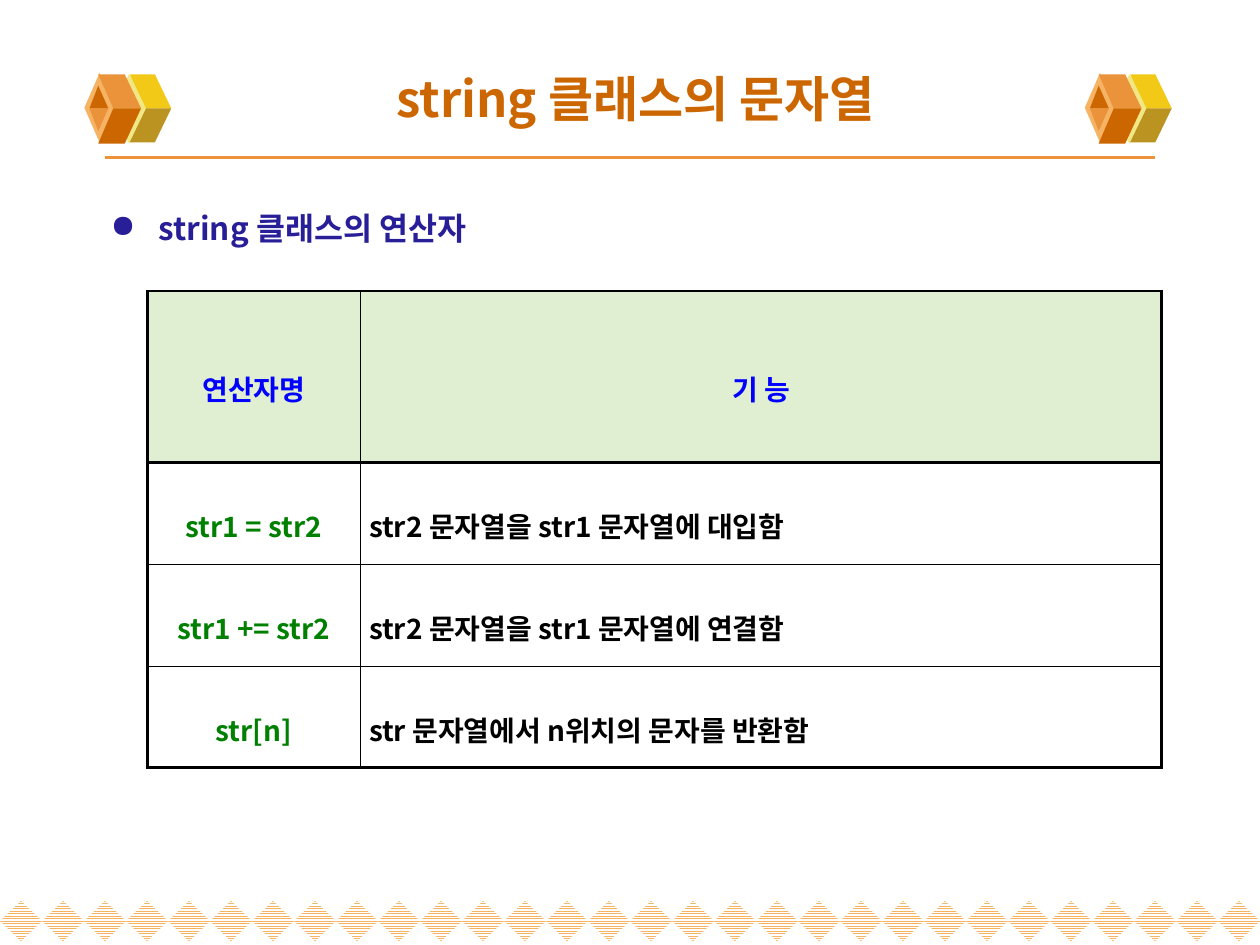
from dataclasses import dataclass

from lxml.etree import SubElement
from pptx import Presentation
from pptx.dml.color import RGBColor
from pptx.enum.dml import MSO_PATTERN
from pptx.enum.shapes import MSO_CONNECTOR, MSO_SHAPE
from pptx.enum.text import MSO_ANCHOR, PP_ALIGN
from pptx.oxml.ns import qn
from pptx.util import Inches, Pt


@dataclass(frozen=True)
class Theme:
    font: str = "Noto Sans CJK KR"
    title_size: int = 28
    bullet_size: int = 18
    cell_size: int = 16
    white: str = "FFFFFF"
    black: str = "000000"
    title: str = "CC6600"
    bullet: str = "271E98"
    header: str = "0000FF"
    header_fill: str = "E0EED1"
    operator: str = "008000"
    dark_orange: str = "CC6600"
    orange: str = "EB933B"
    light_orange: str = "F5B363"
    yellow: str = "F3C917"
    olive: str = "BB9321"
    cream: str = "F1E785"
    outer: float = 1.7
    divider: float = 1.98
    inner: float = 0.28


THEME = Theme()
CUBE_FACES = [
    (THEME.yellow, [(0.49, 0.28), (0.69, 0.28), (0.56, 0.01), (0.36, 0.01)]),
    (THEME.olive, [(0.49, 0.28), (0.69, 0.28), (0.56, 0.55), (0.36, 0.55)]),
    (THEME.orange, [(0.23, 0.28), (0.45, 0.28), (0.32, 0.01), (0.11, 0.01)]),
    (THEME.dark_orange, [(0.23, 0.28), (0.45, 0.28), (0.32, 0.56), (0.11, 0.56)]),
    (THEME.dark_orange, [(0.11, 0.1), (0.04, 0.28), (0.19, 0.28)]),
    (THEME.orange, [(0.11, 0.46), (0.04, 0.28), (0.19, 0.28)]),
]
ROWS = [
    ("연산자명", "기 능"),
    ("str1 = str2", "str2 문자열을 str1 문자열에 대입함"),
    ("str1 += str2", "str2 문자열을 str1 문자열에 연결함"),
    ("str[n]", "str 문자열에서 n위치의 문자를 반환함"),
]


def rgb(color):
    return RGBColor.from_string(color)


def paint(shape, color):
    shape.shadow.inherit = False
    shape.fill.solid()
    shape.fill.fore_color.rgb = rgb(color)
    shape.line.fill.background()


def add_diamond(page, left, top, width, height, color):
    diamond = page.shapes.add_shape(
        MSO_SHAPE.DIAMOND, Inches(left), Inches(top), Inches(width), Inches(height))
    paint(diamond, color)
    return diamond


def add_diamond_strip(page, count=30):
    step = 10 / count
    for index in range(count):
        fill = add_diamond(page, index * step, 7.15, step, 0.32, THEME.white).fill
        fill.patterned()
        fill.pattern = MSO_PATTERN.NARROW_HORIZONTAL
        fill.fore_color.rgb = rgb(THEME.light_orange)
        fill.back_color.rgb = rgb(THEME.white)


def add_face(page, points, color):
    corners = [(Inches(x), Inches(y)) for x, y in points]
    builder = page.shapes.build_freeform(*corners[0])
    builder.add_line_segments(corners[1:], close=True)
    paint(builder.convert_to_shape(), color)


def add_cube(page, left, top=0.58):
    add_diamond(page, left + 0.19, top + 0.01, 0.33, 0.55, THEME.cream)
    for index, (color, points) in enumerate(CUBE_FACES):
        if index == 2:
            add_diamond(page, left, top, 0.24, 0.55, THEME.light_orange)
        add_face(page, [(left + x, top + y) for x, y in points], color)


def add_rule(page):
    rule = page.shapes.add_connector(
        MSO_CONNECTOR.STRAIGHT, Inches(0.83), Inches(1.25), Inches(9.17), Inches(1.25))
    rule.line.color.rgb = rgb(THEME.orange)
    rule.line.width = Pt(2.25)
    SubElement(rule._element.spPr, qn("a:effectLst"))


def write(frame, text, size, color, align=PP_ALIGN.LEFT):
    para = frame.paragraphs[0]
    para.text = text
    para.alignment = align
    para.font.name = THEME.font
    para.font.size = Pt(size)
    para.font.bold = True
    para.font.color.rgb = rgb(color)
    defaults = para._p.pPr.find(qn("a:defRPr"))
    SubElement(defaults, qn("a:ea"), typeface=THEME.font)
    return para


def add_text_box(page, left, top, width, height, anchor):
    box = page.shapes.add_textbox(
        Inches(left), Inches(top), Inches(width), Inches(height))
    frame = box.text_frame
    frame.word_wrap = True
    frame.vertical_anchor = anchor
    return frame


def add_title(page, text):
    frame = add_text_box(page, 0.5, 0.3, 9, 0.95, MSO_ANCHOR.MIDDLE)
    write(frame, text, THEME.title_size, THEME.title, PP_ALIGN.CENTER)


def add_bullet(page, text):
    frame = add_text_box(page, 0.78, 1.61, 8.67, 0.71, MSO_ANCHOR.TOP)
    properties = frame.paragraphs[0]._p.get_or_add_pPr()
    properties.set("marL", str(Inches(0.38)))
    properties.set("indent", str(-Inches(0.38)))
    SubElement(properties, qn("a:buChar"), char="●")
    write(frame, text, THEME.bullet_size, THEME.bullet)


def set_borders(cell, **widths):
    properties = cell._tc.get_or_add_tcPr()
    for side, width in widths.items():
        border = SubElement(properties, qn(f"a:ln{side}"), w=str(Pt(width)))
        fill = SubElement(border, qn("a:solidFill"))
        SubElement(fill, qn("a:srgbClr"), val=THEME.black)


def style_cell(cell, text, row, column):
    header = row == 0
    cell.vertical_anchor = MSO_ANCHOR.MIDDLE
    cell.margin_left = cell.margin_right = Inches(0.07)
    cell.margin_top = cell.margin_bottom = Inches(0.02)
    color = THEME.header if header else (THEME.operator, THEME.black)[column]
    centered = header or column == 0
    align = PP_ALIGN.CENTER if centered else PP_ALIGN.JUSTIFY
    write(cell.text_frame, text, THEME.cell_size, color, align).line_spacing = 1.6
    row_lines = [THEME.outer, THEME.divider, THEME.inner, THEME.inner, THEME.outer]
    column_lines = [THEME.outer, THEME.inner, THEME.outer]
    set_borders(cell, L=column_lines[column], R=column_lines[column + 1],
                T=row_lines[row], B=row_lines[row + 1])
    if header:
        cell.fill.solid()
        cell.fill.fore_color.rgb = rgb(THEME.header_fill)
    else:
        cell.fill.background()


def add_operator_table(page):
    table = page.shapes.add_table(
        len(ROWS), 2, Inches(1.17), Inches(2.31), Inches(8.05), Inches(3.78)).table
    table.first_row = table.horz_banding = False
    for column, width in zip(table.columns, (1.69, 6.36)):
        column.width = Inches(width)
    for row, height in zip(table.rows, (1.36, 0.81, 0.81, 0.8)):
        row.height = Inches(height)
    for row, texts in enumerate(ROWS):
        for column, text in enumerate(texts):
            style_cell(table.cell(row, column), text, row, column)


def main():
    deck = Presentation()
    deck.slide_width, deck.slide_height = Inches(10), Inches(7.5)
    page = deck.slides.add_slide(deck.slide_layouts[6])
    add_diamond_strip(page)
    add_rule(page)
    for left in (0.67, 8.61):
        add_cube(page, left)
    add_title(page, " string 클래스의 문자열")
    add_bullet(page, "string 클래스의 연산자")
    add_operator_table(page)
    deck.save("out.pptx")


if __name__ == "__main__":
    main()
